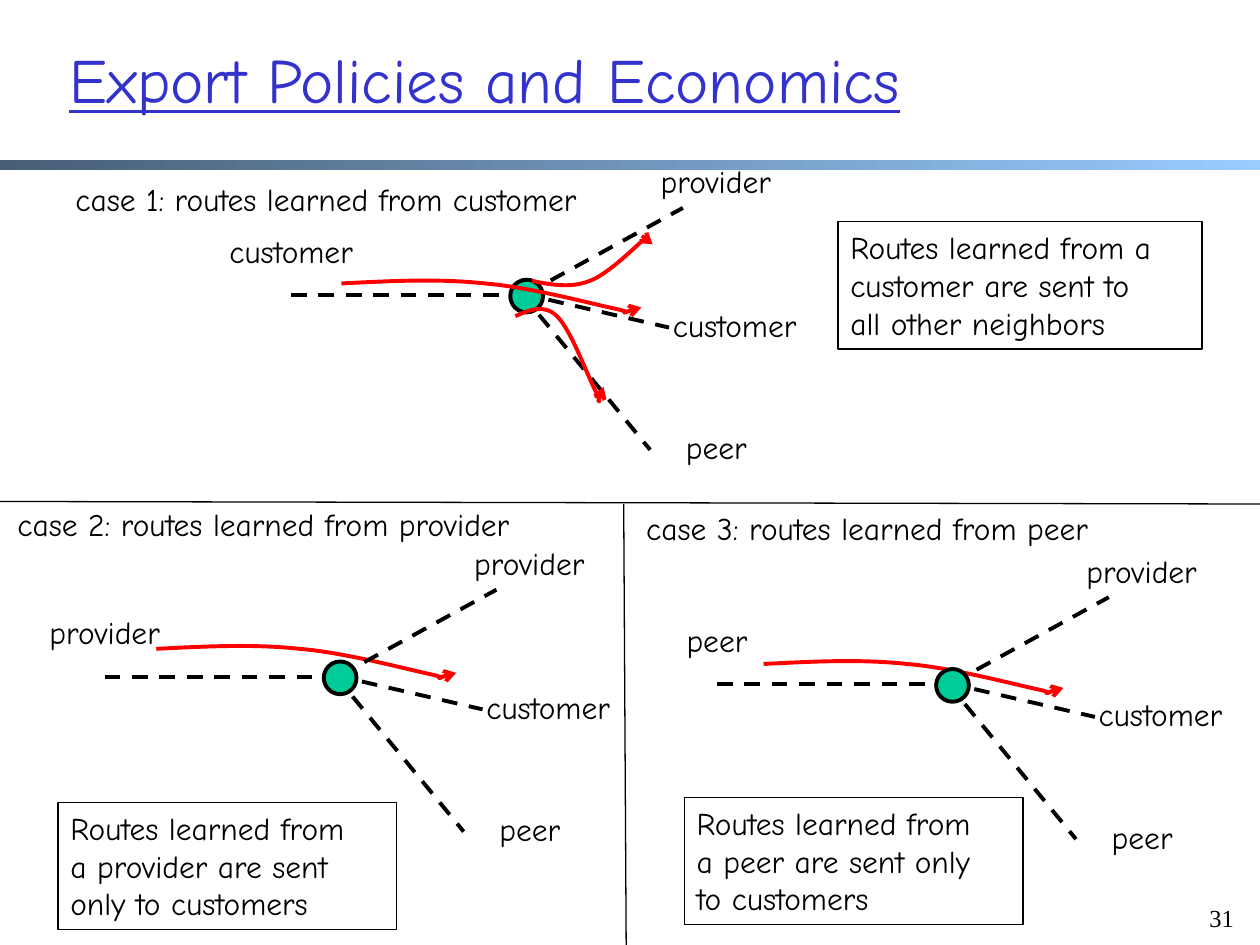
from pptx import Presentation
from pptx.dml.color import RGBColor
from pptx.enum import dml, shapes, text
from pptx.oxml import ns, xmlchemy
from pptx.util import Inches, Pt

BLACK = RGBColor(0x00, 0x00, 0x00)
RED = RGBColor(0xFF, 0x00, 0x00)
GREEN = RGBColor(0x00, 0xCC, 0x99)
TITLE_BLUE = RGBColor(0x33, 0x33, 0xCC)
BAR_DARK = RGBColor(0x47, 0x5E, 0x76)
BAR_LIGHT = RGBColor(0x99, 0xCC, 0xFF)

THROUGH = [(0, 0.04), (0.39, 0.02), (0.77, 0), (1.14, 0.04), (1.5, 0.07),
           (1.98, 0.2), (2.17, 0.24), (2.35, 0.28), (2.21, 0.27),
           (2.25, 0.27), (2.28, 0.26), (2.29, 0.25), (2.38, 0.23)]
TO_PROVIDER = [(0, 0.37), (0.15, 0.4), (0.31, 0.43), (0.46, 0.37), (0.6, 0.32),
               (0.8, 0.12), (0.87, 0.06), (0.95, 0), (0.89, 0.02),
               (0.91, 0.03), (0.92, 0.03), (0.92, 0.05), (0.96, 0.08)]
TO_PEER = [(0, 0.1), (0.11, 0.05), (0.23, 0), (0.33, 0.1), (0.44, 0.2),
           (0.58, 0.59), (0.64, 0.7), (0.69, 0.81), (0.65, 0.77),
           (0.66, 0.77), (0.67, 0.76), (0.67, 0.71), (0.7, 0.66)]

SPOKES = [((1.87, -0.01), (3.11, -0.69)),
          ((1.83, -0.01), (3, 0.26)),
          ((1.83, -0.01), (2.85, 1.23))]
NEIGHBORS = [("provider", 2.78, -1.1), ("customer", 2.88, 0.04), ("peer", 3.01, 1.01)]
LABEL_WIDTH = {"provider": 1.18, "customer": 1.28, "peer": 0.73}


class Slide:
    font = "Comic Neue"
    size = 18
    thick = 2.25
    thin = 0.75

    def __init__(self, deck):
        self.page = deck.slides.add_slide(deck.slide_layouts[5])
        self.shapes = self.page.shapes

    def stroke(self, line, color, width, arrow=False):
        line.color.rgb = color
        line.width = Pt(width)
        if arrow:
            end = xmlchemy.OxmlElement("a:tailEnd")
            end.set("type", "arrow")
            line._get_or_add_ln().append(end)

    def set_words(self, shape, words, align=text.PP_ALIGN.LEFT, wrap=False,
                  font=font, size=size, color=BLACK):
        frame = shape.text_frame
        frame.word_wrap = wrap
        frame.vertical_anchor = text.MSO_ANCHOR.TOP
        if not wrap:
            frame.auto_size = text.MSO_AUTO_SIZE.SHAPE_TO_FIT_TEXT
        para = frame.paragraphs[0]
        para.text = words
        para.alignment = align
        para.font.name = font
        para.font.size = Pt(size)
        para.font.color.rgb = color

    def title(self, words, left, top, width, height):
        box = self.shapes.title
        box.left, box.top = Inches(left), Inches(top)
        box.width, box.height = Inches(width), Inches(height)
        self.set_words(box, words, wrap=True, size=36, color=TITLE_BLUE)
        box.text_frame.auto_size = text.MSO_AUTO_SIZE.NONE
        box.text_frame.vertical_anchor = text.MSO_ANCHOR.MIDDLE
        box.text_frame.paragraphs[0].font.underline = True

    def label(self, words, left, top, width, height=0.4, **style):
        box = self.shapes.add_textbox(
            Inches(left), Inches(top), Inches(width), Inches(height))
        self.set_words(box, words, **style)

    def solid(self, kind, left, top, width, height):
        shape = self.shapes.add_shape(
            kind, Inches(left), Inches(top), Inches(width), Inches(height))
        shape.shadow.inherit = False
        return shape

    def bar(self, left, top, width, height):
        shape = self.solid(shapes.MSO_SHAPE.RECTANGLE, left, top, width, height)
        shape.line.fill.background()
        shape.fill.gradient()
        shape.fill.gradient_angle = 0
        for stop, position, color in zip(
                shape.fill.gradient_stops, (0, 1), (BAR_DARK, BAR_LIGHT)):
            stop.position = position
            stop.color.rgb = color

    def node(self, left, top, size=0.26):
        shape = self.solid(shapes.MSO_SHAPE.OVAL, left, top, size, size)
        shape.fill.solid()
        shape.fill.fore_color.rgb = GREEN
        self.stroke(shape.line, BLACK, self.thick)

    def note(self, words, left, top, width, height=1.01):
        shape = self.solid(shapes.MSO_SHAPE.RECTANGLE, left, top, width, height)
        shape.fill.background()
        self.stroke(shape.line, BLACK, self.thin)
        self.set_words(shape, words)

    def line(self, start, end, dashed=False, arrow=False):
        link = self.shapes.add_connector(
            shapes.MSO_CONNECTOR.STRAIGHT, *map(Inches, (*start, *end)))
        link._element.spPr.append(xmlchemy.OxmlElement("a:effectLst"))
        if dashed:
            link.line.dash_style = dml.MSO_LINE.DASH
        self.stroke(link.line, BLACK, self.thick if dashed else self.thin, arrow)

    def curve(self, left, top, points):
        spots = [(Inches(left + x), Inches(top + y)) for x, y in points]
        builder = self.shapes.build_freeform(*spots[0])
        builder.add_line_segments(spots[1:], close=False)
        shape = builder.convert_to_shape()
        shape.shadow.inherit = False
        shape.fill.background()
        self.stroke(shape.line, RED, self.thick, arrow=True)
        segments = list(shape._element.iter(ns.qn("a:lnTo")))
        outline = segments[0].getparent()
        for first in range(0, len(segments), 3):
            bezier = xmlchemy.OxmlElement("a:cubicBezTo")
            for segment in segments[first:first + 3]:
                bezier.append(segment[0])
                outline.remove(segment)
            outline.append(bezier)

    def network(self, left, top, source):
        self.line((left, top), (left + 1.9, top), dashed=True, arrow=True)
        for (x1, y1), (x2, y2) in SPOKES:
            self.line((left + x1, top + y1), (left + x2, top + y2), dashed=True)
        source_spot = (source, -LABEL_WIDTH[source] / 2, -0.55)
        for words, x, y in [source_spot, *NEIGHBORS]:
            self.label(words, left + x, top + y, LABEL_WIDTH[words],
                       align=text.PP_ALIGN.CENTER)
        self.node(left + 1.74, top - 0.12)


def main():
    deck = Presentation()
    deck.slide_width, deck.slide_height = Inches(10), Inches(7.5)
    slide = Slide(deck)
    slide.bar(0, 1.27, 10, 0.08)
    slide.title("Export Policies and Economics", 0.45, 0, 8.5, 1.25)

    slide.network(2.31, 2.34, "customer")
    slide.curve(2.71, 2.21, THROUGH)
    slide.curve(4.22, 1.86, TO_PROVIDER)
    slide.curve(4.09, 2.41, TO_PEER)
    slide.curve(1.24, 5.11, THROUGH)
    slide.network(0.83, 5.37, "provider")
    slide.curve(6.06, 5.23, THROUGH)
    slide.network(5.69, 5.43, "peer")

    slide.note("Routes learned from a \ncustomer are sent to\nall other neighbors",
               6.65, 1.76, 2.89)
    slide.note("Routes learned from \na provider are sent\nonly to customers",
               0.46, 6.37, 2.69)
    slide.note("Routes learned from \na peer are sent only \nto customers",
               5.43, 6.33, 2.69)

    slide.line((0, 3.98), (10, 4))
    slide.line((4.95, 4), (4.97, 7.5))

    slide.label("case 1: routes learned from customer", 0.5, 1.38, 4.56)
    slide.label("case 2: routes learned from provider", 0.04, 3.96, 4.5)
    slide.label("case 3: routes learned from peer", 5.03, 3.99, 4.05)
    slide.label("31", 9.5, 7.12, 0.5, 0.5, wrap=True,
                font="Times New Roman", size=14)
    deck.save("out.pptx")


if __name__ == "__main__":
    main()
